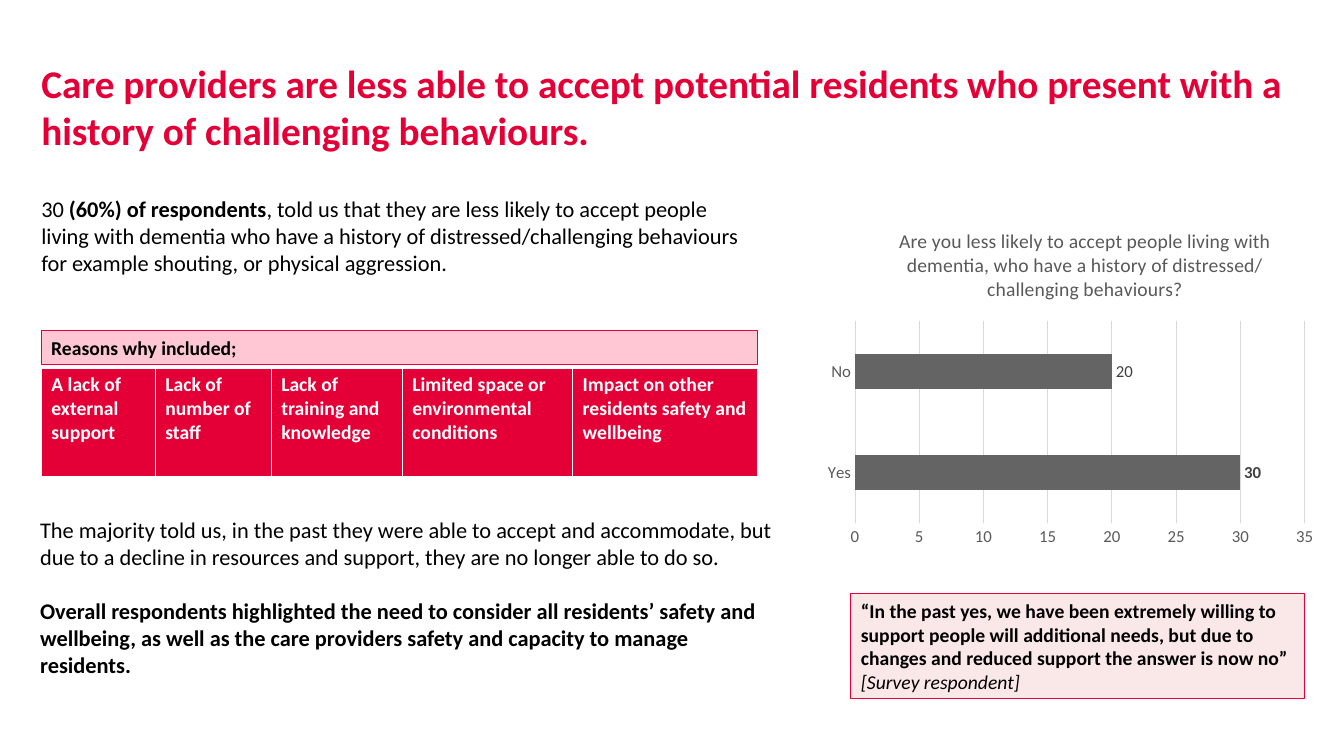
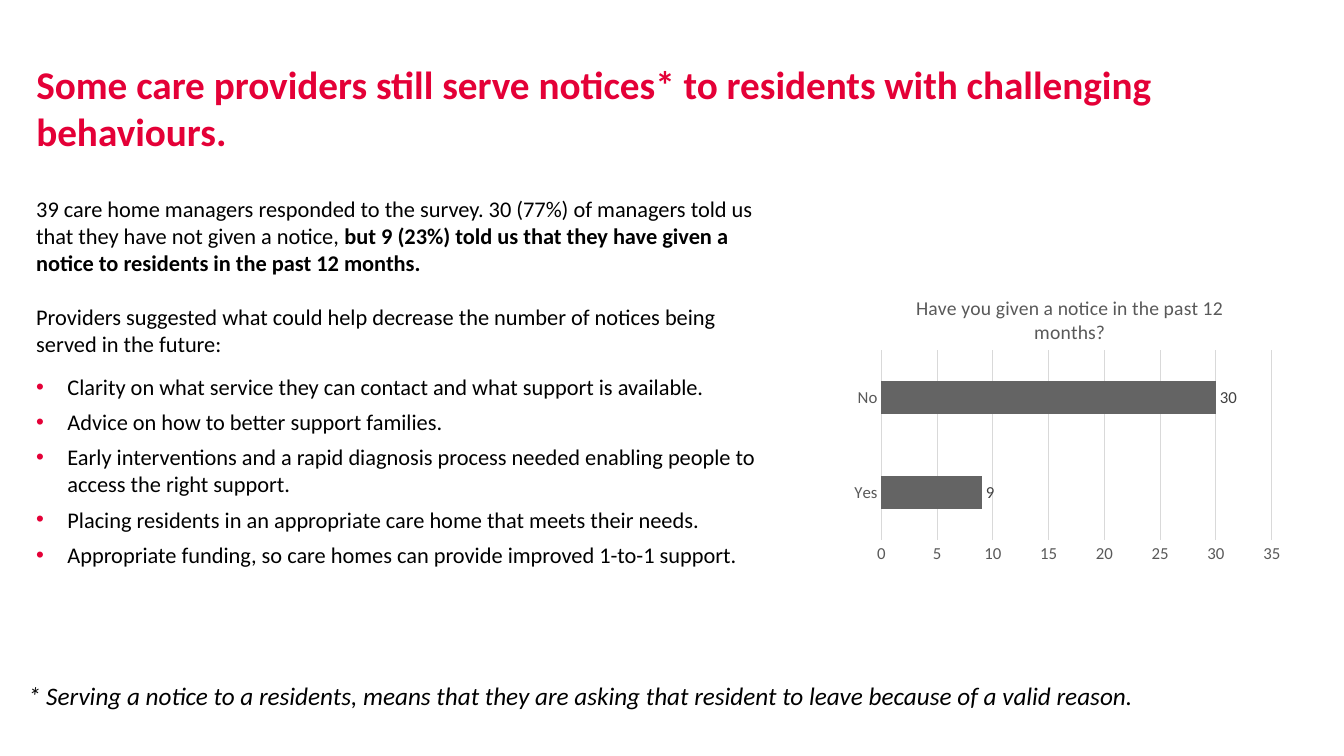
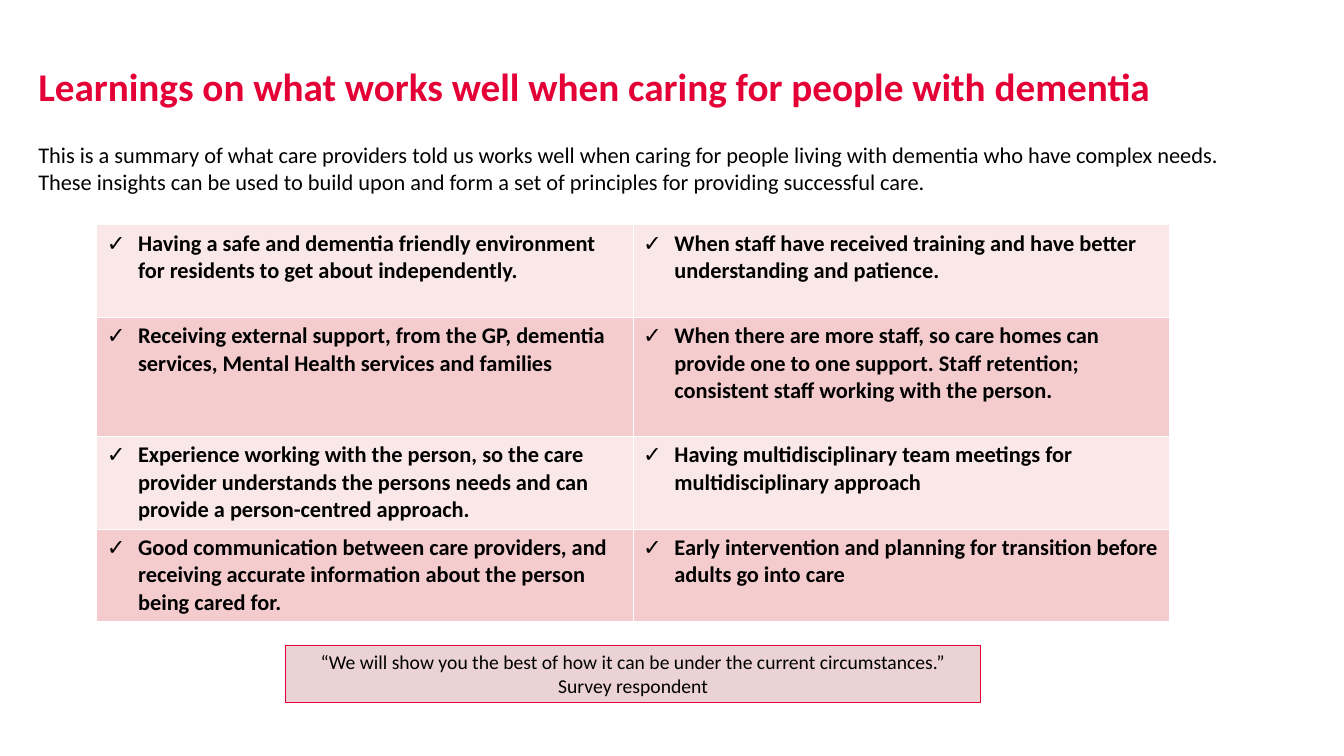
from dataclasses import dataclass

from lxml import etree
from pptx import Presentation
from pptx.chart.data import CategoryChartData
from pptx.dml.color import RGBColor
from pptx.enum.chart import XL_CHART_TYPE, XL_LABEL_POSITION, XL_TICK_MARK
from pptx.enum.shapes import MSO_SHAPE
from pptx.enum.text import MSO_ANCHOR, MSO_AUTO_SIZE, PP_ALIGN
from pptx.oxml.ns import qn
from pptx.util import Inches, Pt

BAR = XL_CHART_TYPE.BAR_CLUSTERED
OUTSIDE = XL_LABEL_POSITION.OUTSIDE_END
NO_TICK = XL_TICK_MARK.NONE
RECTANGLE = MSO_SHAPE.RECTANGLE
TOP, MIDDLE = MSO_ANCHOR.TOP, MSO_ANCHOR.MIDDLE
LEFT, CENTER = PP_ALIGN.LEFT, PP_ALIGN.CENTER
NO_FIT = MSO_AUTO_SIZE.NONE
TITLE_ONLY = 5
BLANK_LINE = 19.5


@dataclass(frozen=True)
class Theme:
    font: str = "Calibri"
    accent: str = "E40037"
    black: str = "000000"
    white: str = "FFFFFF"
    heading_fill: str = "FFC7D4"
    pale: str = "FAE7E8"
    rose: str = "F5CCCE"
    quote_fill: str = "EAD2D5"
    bar: str = "646464"
    axis_text: str = "595959"
    label_text: str = "404040"
    grid: str = "D9D9D9"
    title_size: int = 28
    note_size: int = 18
    body_size: int = 16
    small_size: int = 14
    axis_size: int = 12


THEME = Theme()


@dataclass
class Para:
    """Spans are (text, style) pairs; a style may hold b (bold) and i (italic)."""
    spans: list
    after: float = 0
    bullet: str = ""
    bullet_color: str = THEME.black


def rgb(value):
    return RGBColor.from_string(value)


def inches(*lengths):
    return [Inches(length) for length in lengths]


class Deck:
    def __init__(self, theme):
        self.theme = theme
        self.presentation = Presentation()
        self.presentation.slide_width, self.presentation.slide_height = inches(13.33, 7.5)
        self.page = None

    def style_font(self, font, size, color, style=""):
        font.name, font.size = self.theme.font, Pt(size)
        font.color.rgb = rgb(color)
        font.bold, font.italic = "b" in style, "i" in style

    def add_bullet(self, para, char, color):
        properties = para._p.get_or_add_pPr()
        properties.set("marL", str(Inches(0.31)))
        properties.set("indent", str(-Inches(0.31)))
        bullet_color = etree.SubElement(properties, qn("a:buClr"))
        etree.SubElement(bullet_color, qn("a:srgbClr")).set("val", color)
        etree.SubElement(properties, qn("a:buFont")).set("typeface", "Arial")
        etree.SubElement(properties, qn("a:buChar")).set("char", char)

    def fill_frame(self, frame, paras, size, color, align=LEFT):
        frame.word_wrap = True
        for number, content in enumerate(paras):
            para = frame.add_paragraph() if number else frame.paragraphs[0]
            para.alignment = align
            para.space_before, para.space_after = Pt(0), Pt(content.after)
            if content.bullet:
                self.add_bullet(para, content.bullet, content.bullet_color)
            for text, style in content.spans:
                span = para.add_run()
                span.text = text
                self.style_font(span.font, size, color, style)

    def clear_margins(self, frame):
        frame.margin_left = frame.margin_right = frame.margin_top = frame.margin_bottom = 0

    def new_page(self, title, left, top, width):
        layout = self.presentation.slide_layouts[TITLE_ONLY]
        self.page = self.presentation.slides.add_slide(layout)
        box = self.page.shapes.title
        box.left, box.top, box.width, box.height = inches(left, top, width, 1.16)
        frame = box.text_frame
        self.clear_margins(frame)
        frame.auto_size, frame.vertical_anchor = NO_FIT, TOP
        self.fill_frame(frame, [Para([(title, "b")])], self.theme.title_size,
                        self.theme.accent)

    def text(self, at, paras, size=THEME.body_size, inset=False):
        frame = self.page.shapes.add_textbox(*inches(*at)).text_frame
        if not inset:
            self.clear_margins(frame)
        self.fill_frame(frame, paras, size, self.theme.black)

    def panel(self, at, fill, paras, align=LEFT):
        box = self.page.shapes.add_shape(RECTANGLE, *inches(*at))
        box.shadow.inherit = False
        box.fill.solid()
        box.fill.fore_color.rgb = rgb(fill)
        box.line.color.rgb, box.line.width = rgb(self.theme.accent), Pt(0.75)
        box.text_frame.vertical_anchor = MIDDLE
        self.fill_frame(box.text_frame, paras, self.theme.small_size, self.theme.black, align)

    def table(self, left, top, widths, heights, rows, fills, size, color, bullet=""):
        """Fills are given one per row."""
        at = inches(left, top, sum(widths), sum(heights))
        table = self.page.shapes.add_table(len(rows), len(widths), *at).table
        for column, width in zip(table.columns, widths):
            column.width = Inches(width)
        for number, (texts, fill) in enumerate(zip(rows, fills)):
            table.rows[number].height = Inches(heights[number])
            for cell, text in zip(table.rows[number].cells, texts):
                cell.fill.solid()
                cell.fill.fore_color.rgb = rgb(fill)
                self.fill_frame(cell.text_frame, [Para([(text, "b")], bullet=bullet)],
                                size, color)

    def place(self, element, index, **fractions):
        """Give a chart part a fixed place, in fractions of the chart."""
        layout = element.find(qn("c:layout"))
        if layout is None:
            layout = etree.Element(qn("c:layout"))
            element.insert(index, layout)
        manual = etree.SubElement(layout, qn("c:manualLayout"))
        settings = {"layoutTarget": "inner"} if "w" in fractions else {}
        settings.update(xMode="edge", yMode="edge", **fractions)
        for key, value in settings.items():
            etree.SubElement(manual, qn(f"c:{key}")).set("val", str(value))

    def bar_chart(self, at, title, values, title_place, plot_place, bold_point=None):
        theme = self.theme
        data = CategoryChartData()
        data.categories = ["Yes", "No"]
        data.add_series("Series 1", values)
        chart = self.page.shapes.add_chart(BAR, *inches(*at), data).chart
        chart.has_legend = False
        self.style_font(chart.font, theme.axis_size, theme.axis_text)

        chart.has_title = True
        heading = chart.chart_title
        heading.text_frame.text = title
        span = heading.text_frame.paragraphs[0].runs[0]
        self.style_font(span.font, theme.small_size, theme.axis_text)

        for axis in (chart.category_axis, chart.value_axis):
            axis.major_tick_mark = axis.minor_tick_mark = NO_TICK
            self.style_font(axis.tick_labels.font, theme.axis_size, theme.axis_text)
        chart.value_axis.minimum_scale, chart.value_axis.maximum_scale = 0, 35
        chart.value_axis.major_unit = 5
        chart.value_axis.format.line.fill.background()
        for line in (chart.category_axis.format.line,
                     chart.value_axis.major_gridlines.format.line):
            line.color.rgb, line.width = rgb(theme.grid), Pt(0.75)

        plot = chart.plots[0]
        plot.gap_width, plot.vary_by_categories = 182, False
        series = plot.series[0]
        series.format.fill.solid()
        series.format.fill.fore_color.rgb = rgb(theme.bar)
        labels = series.data_labels
        labels.show_value, labels.position = True, OUTSIDE
        self.style_font(labels.font, theme.axis_size, theme.label_text)
        if bold_point is not None:
            label = series.points[bold_point].data_label
            self.style_font(label.font, theme.axis_size, theme.label_text, "b")
            label.position = OUTSIDE

        chart_xml = chart._chartSpace.find(qn("c:chart"))
        self.place(chart_xml.find(qn("c:title")), 1, **title_place)
        self.place(chart_xml.find(qn("c:plotArea")), 0, **plot_place)


def acceptance_page(deck):
    theme = deck.theme
    deck.new_page("Care providers are less able to accept potential residents who present "
                  "with a history of challenging behaviours.", 0.41, 0.59, 12.73)
    deck.text((0.41, 1.94, 7.1, 0.88), [Para([
        ("30 ", ""), ("(60%) of respondents", "b"),
        (", told us that they are less likely to accept people living with dementia who have "
         "a history of distressed/challenging behaviours for example shouting, or physical "
         "aggression.", "")])])
    deck.bar_chart((8.13, 2.15, 5.01, 3.34),
                   "Are you less likely to accept people living with dementia, who have a "
                   "history of distressed/challenging behaviours?", (30, 20),
                   dict(x=0.15, y=0.02), dict(x=0.07, y=0.31, w=0.89, h=0.6), bold_point=0)
    deck.panel((0.41, 3.28, 7.1, 0.34), theme.heading_fill,
               [Para([("Reasons why included;", "b")])])
    deck.table(0.41, 3.65, (1.13, 1.15, 1.3, 1.69, 1.83), (1.08,),
               [("A lack of external support", "Lack of number of staff",
                 "Lack of training and knowledge", "Limited space or environmental conditions",
                 "Impact on other residents safety and wellbeing")],
               [theme.accent], theme.small_size, theme.white)
    deck.text((0.3, 5.07, 7.46, 1.72), [
        Para([("The majority told us, in the past they were able to accept and accommodate, but "
               "due to a decline in resources and support, they are no longer able to do so.",
               "")], after=BLANK_LINE),
        Para([("Overall respondents highlighted the need to consider all residents’ safety and "
               "wellbeing, as well as the care providers safety and capacity to manage "
               "residents.", "b")])], inset=True)
    deck.panel((8.44, 5.89, 4.5, 1.04), theme.pale, [
        Para([("“In the past yes, we have been extremely willing to support people will "
               "additional needs, but due to changes and reduced support the answer is now no”",
               "b")]),
        Para([("[Survey respondent]", "i")])])


def notices_page(deck):
    theme = deck.theme
    deck.new_page("Some care providers still serve notices* to residents with challenging "
                  "behaviours.", 0.36, 0.6, 12.68)
    deck.bar_chart((8.39, 2.71, 4.4, 2.94), "Have you given a notice in the past 12 months?",
                   (9, 30), dict(x=0.15, y=0.06), dict(x=0.08, y=0.26, w=0.88, h=0.64))
    suggestions = (
        "Clarity on what service they can contact and what support is available.",
        "Advice on how to better support families.",
        "Early interventions and a rapid diagnosis process needed enabling people to access "
        "the right support.",
        "Placing residents in an appropriate care home that meets their needs.",
        "Appropriate funding, so care homes can provide improved 1-to-1 support.")
    deck.text((0.36, 1.94, 7.16, 3.8), [
        Para([("39 care home managers responded to the survey. 30 (77%) of managers told us "
               "that they have not given a notice, ", ""),
              ("but 9 (23%) told us that they have given a notice to residents in the past "
               "12 months.", "b")], after=BLANK_LINE),
        Para([("Providers suggested what could help decrease the number of notices being "
               "served in the future:", "")], after=11.3),
        *[Para([(suggestion, "")], 6, "•", theme.accent) for suggestion in suggestions]])
    deck.text((0.18, 6.7, 12.86, 0.4), [
        Para([("* Serving a notice to a residents, means that they are asking that resident to "
               "leave because of a valid reason.", "i")])], theme.note_size, inset=True)


def learnings_page(deck):
    theme = deck.theme
    deck.new_page("Learnings on what works well when caring for people with dementia",
                  0.38, 0.62, 11.81)
    learnings = [
        ("Having a safe and dementia friendly environment for residents to get about "
         "independently.",
         "When staff have received training and have better understanding and patience."),
        ("Receiving external support, from the GP, dementia services, Mental Health services "
         "and families",
         "When there are more staff, so care homes can provide one to one support. Staff "
         "retention; consistent staff working with the person."),
        ("Experience working with the person, so the care provider understands the persons "
         "needs and can provide a person-centred approach.",
         "Having multidisciplinary team meetings for multidisciplinary approach"),
        ("Good communication between care providers, and receiving accurate information about "
         "the person being cared for.",
         "Early intervention and planning for transition before adults go into care")]
    deck.table(0.96, 2.23, (5.32, 5.32), (0.92, 1.18, 0.92, 0.92), learnings,
               [theme.pale, theme.rose] * 2, theme.body_size, theme.black, bullet="✓")
    deck.text((0.38, 1.4, 12.01, 0.96), [
        Para([("This is a summary of what care providers told us works well when caring for "
               "people living with dementia who have complex needs. These insights can be used "
               "to build upon and form a set of principles for providing successful care.",
               "")])])
    deck.panel((2.83, 6.4, 6.9, 0.57), theme.quote_fill, [
        Para([("“We will show you the best of how it can be under the current "
               "circumstances.”", "")]),
        Para([("Survey respondent", "")])], CENTER)


def main():
    deck = Deck(THEME)
    for build_page in (acceptance_page, notices_page, learnings_page):
        build_page(deck)
    deck.presentation.save("out.pptx")


if __name__ == "__main__":
    main()
